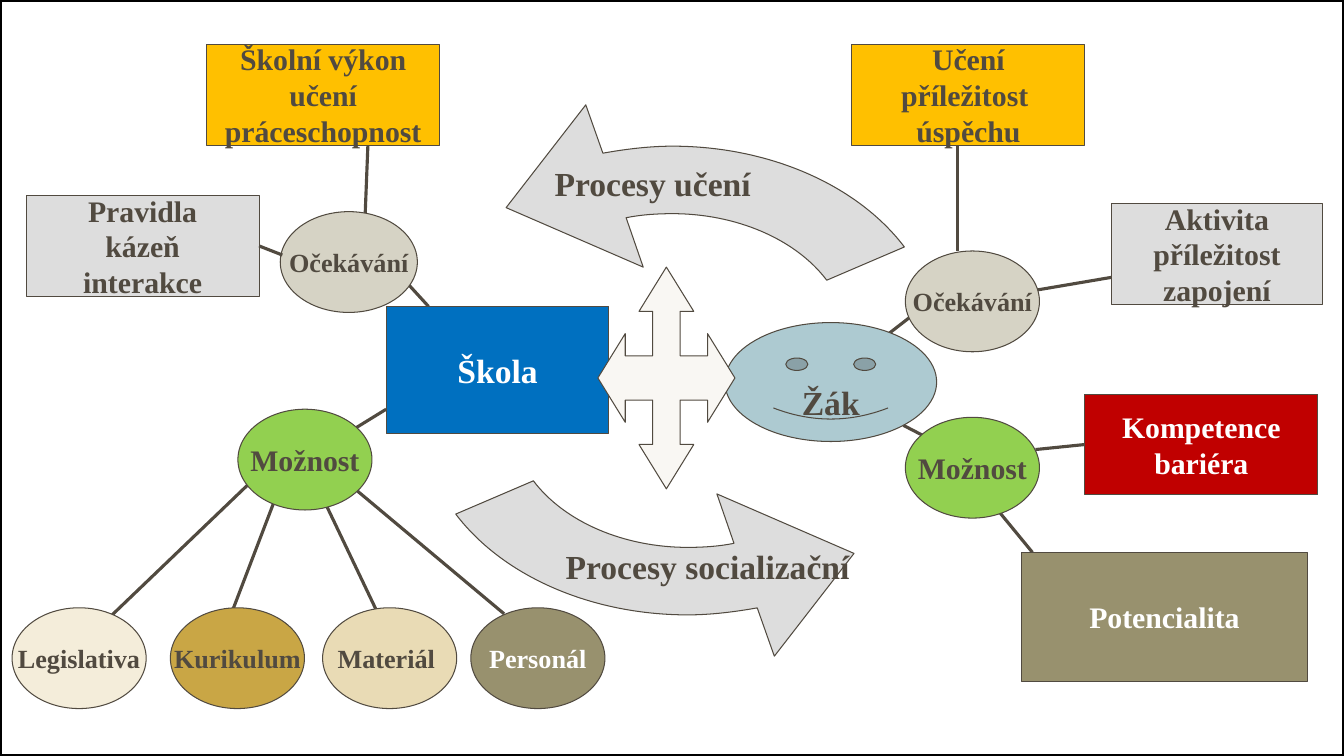
from lxml.etree import SubElement
from pptx import Presentation
from pptx.dml.color import RGBColor
from pptx.enum.shapes import MSO_CONNECTOR, MSO_SHAPE
from pptx.enum.text import MSO_ANCHOR, PP_ALIGN
from pptx.oxml.ns import qn
from pptx.util import Pt

PX = 9144
INK, WHITE, GREY, GREEN = "514A40", "FFFFFF", "DDDDDD", "92D050"
STONE, AMBER, OLIVE = "D6D3C5", "FFC000", "98916E"
SMALL, MEDIUM, LARGE = 18.7, 21.3, 24
RECT, OVAL = MSO_SHAPE.RECTANGLE, MSO_SHAPE.OVAL
BENT_SIZE = (532, 399)
BENT_ARROW = (
    ("moveTo", (220, 71)),
    ("cubicBezTo", (235, 68), (250, 67), (266, 67)),
    ("cubicBezTo", (329, 67), (388, 92), (419, 133)),
    ("lnTo", (496, 100)),
    ("cubicBezTo", (449, 38), (361, 0), (266, 0)),
    ("cubicBezTo", (243, 0), (219, 3), (197, 7)),
    ("lnTo", (180, -41)),
    ("lnTo", (101, 61)),
    ("lnTo", (237, 120)),
    ("lnTo", (220, 71)),
    ("close",),
)


def px(length):
    """Turn px into EMU."""
    return round(length * PX)


def color(value):
    """Turn a hex string into a colour."""
    return RGBColor.from_string(value)


def paint(shape, fill, line=INK, width=0.75):
    """Give a shape its fill and outline, without shadow."""
    shape.shadow.inherit = False
    if fill:
        shape.fill.solid()
        shape.fill.fore_color.rgb = color(fill)
    else:
        shape.fill.background()
    shape.line.color.rgb = color(line)
    shape.line.width = Pt(width)


def write(shape, text, size, ink=INK, align=PP_ALIGN.CENTER, wrap=False):
    """Write bold lines of text into a shape."""
    frame = shape.text_frame
    frame.word_wrap = wrap
    frame.margin_left = frame.margin_right = px(13)
    frame.margin_top = frame.margin_bottom = px(7)
    frame.text = text
    for para in frame.paragraphs:
        para.alignment = align
        para.font.name = "Times New Roman"
        para.font.size = Pt(size)
        para.font.bold = True
        para.font.color.rgb = color(ink)


def add_node(page, box, kind, place, fill, text, size=MEDIUM, ink=INK):
    """Add a labelled shape at a place inside the box."""
    left, top, width, height = place
    shape = page.shapes.add_shape(
        kind, px(box[0] + left), px(box[1] + top), px(width), px(height))
    paint(shape, fill)
    write(shape, text, size, ink)
    shape.text_frame.vertical_anchor = MSO_ANCHOR.MIDDLE
    return shape


def add_link(page, box, x1, y1, x2, y2):
    """Add a plain line between two points inside the box."""
    left, top = box
    link = page.shapes.add_connector(
        MSO_CONNECTOR.STRAIGHT, px(left + x1), px(top + y1), px(left + x2), px(top + y2))
    link.line.color.rgb = color(INK)
    link.line.width = Pt(2.25)
    SubElement(link._element.spPr, qn("a:effectLst"))
    return link


def add_outline(page, left, top, points, fill):
    """Add a closed outline whose points are measured from left and top."""
    spots = [(px(left + x), px(top + y)) for x, y in points]
    builder = page.shapes.build_freeform(*spots[0], scale=1.0)
    builder.add_line_segments(spots[1:], close=True)
    shape = builder.convert_to_shape()
    paint(shape, fill)
    return shape


def add_bent_arrow(page, left, top, turn):
    """Add a bent arrow with curved sides, turned about the middle of its frame."""
    width, height = BENT_SIZE
    corners = [(0, 0), (width, 0), (width, height), (0, height)]
    arrow = add_outline(page, left, top, corners, GREY)
    outline = next(arrow._element.iter(qn("a:path")))
    for part in list(outline):
        outline.remove(part)
    outline.set("w", str(px(width)))
    outline.set("h", str(px(height)))
    for command, *points in BENT_ARROW:
        part = SubElement(outline, qn(f"a:{command}"))
        for x, y in points:
            SubElement(part, qn("a:pt"), x=str(px(x)), y=str(px(y)))
    arrow.rotation = turn


def draw_frame(page, width, height):
    """Draw the black border of the slide."""
    paint(page.shapes.add_shape(RECT, 0, 0, px(width), px(height)), None, "000000", 2.25)


def draw_school(page, box):
    """Draw the school with its expectations and possibilities."""
    for ends in ((413, 260, 392, 237), (488, 565, 340, 441), (217, 566, 259, 456),
                 (363, 565, 311, 456), (350, 174, 353, 97), (371, 362, 332, 386),
                 (92, 573, 238, 433)):
        add_link(page, box, *ends)
    add_node(page, box, OVAL, (266, 166, 136, 100), STONE, "Očekávání", SMALL)
    add_node(page, box, OVAL, (224, 362, 133, 100), GREEN, "Možnost")
    add_node(page, box, RECT, (193, 0, 231, 100), AMBER, "Školní výkon\nučení\npráceschopnost")
    rules = add_node(page, box, RECT, (14, 150, 231, 100), GREY, "Pravidla\nkázeň\ninterakce")
    add_link(page, box, 245, 200, 268, 209).begin_connect(rules, 3)
    for left, fill, text, ink in ((455, OLIVE, "Personál", WHITE),
                                  (308, "E9DBB5", "Materiál ", INK),
                                  (157, "C9A645", "Kurikulum", INK),
                                  (0, "F4EDDA", "Legislativa", INK)):
        add_node(page, box, OVAL, (left, 559, 133, 100), fill, text, SMALL, ink)
    add_node(page, box, RECT, (371, 260, 221, 126), "0070C0", "Škola", LARGE, WHITE)


def draw_pupil(page, box):
    """Draw the pupil with expectations and possibilities."""
    for ends in ((187, 268, 156, 292), (302, 245, 396, 229), (231, 205, 231, 95),
                 (305, 504, 273, 465), (177, 378, 208, 394)):
        add_link(page, box, *ends)
    add_node(page, box, OVAL, (179, 205, 133, 100), STONE, "Očekávání", SMALL)
    add_node(page, box, RECT, (126, 0, 231, 100), AMBER, "Učení\npříležitost \núspěchu")
    add_node(page, box, RECT, (383, 158, 210, 100), GREY, "Aktivita\npříležitost\nzapojení")
    add_node(page, box, RECT, (294, 504, 284, 128), OLIVE, "Potencialita", ink=WHITE)
    face = add_node(page, box, MSO_SHAPE.SMILEY_FACE, (0, 276, 210, 118), "ADCAD1", "Žák", LARGE)
    face.adjustments[0] = 0.047
    face.text_frame.margin_top = px(46)
    add_node(page, box, OVAL, (179, 370, 133, 100), GREEN, "Možnost")
    skills = add_node(page, box, RECT, (357, 347, 231, 100), "C00000",
                      "Kompetence\nbariéra", ink=WHITE)
    add_link(page, box, 357, 397, 308, 402).begin_connect(skills, 1)


def draw_processes(page, box):
    """Draw the two bent arrows, their captions and the four-way arrow."""
    left, top = box
    add_bent_arrow(page, left, top, 0)
    add_bent_arrow(page, left + 15, top + 66, 180)

    for x, y, span, text, wrap in ((136, 10, 388, "Procesy učení", True),
                                   (147, 390, 311, "Procesy socializační", False)):
        caption = page.shapes.add_textbox(px(left + x), px(top + y), px(span), px(54))
        write(caption, text, LARGE, align=PP_ALIGN.LEFT, wrap=wrap)

    arm = [(0, -5), (-2, -3), (-1, -3), (-1, -1), (-3, -1), (-3, -2)]
    cross = []
    for _ in range(4):
        cross += arm
        arm = [(y, -x) for x, y in arm]
    add_outline(page, left + 260, top + 230, [(x * 13.6, y * 22) for x, y in cross], "F9F7F3")


def main():
    """Build and save the deck."""
    deck = Presentation()
    deck.slide_width, deck.slide_height = px(1333), px(750)
    page = deck.slides.add_slide(deck.slide_layouts[6])
    draw_frame(page, 1333, 750)
    draw_school(page, (12, 44))
    draw_pupil(page, (719, 44))
    draw_processes(page, (401, 145))
    deck.save("out.pptx")


if __name__ == "__main__":
    main()
